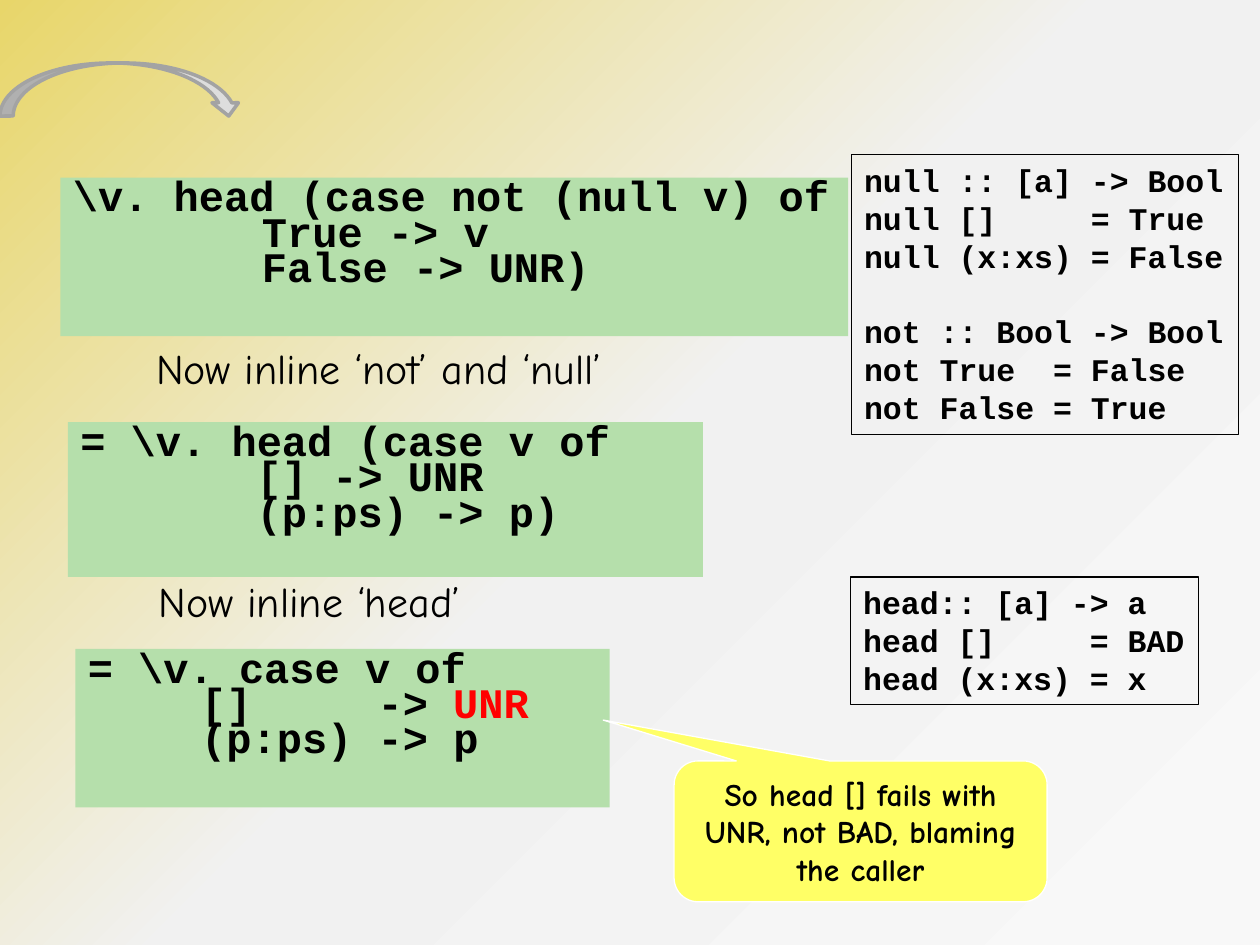
from copy import deepcopy
from pptx import Presentation
from pptx.dml.color import RGBColor
from pptx.enum import shapes, text
from pptx.util import Cm, Pt

COLORS = {"ink": "000000", "blame": "FF0000", "code": "B5DFAB", "callout": "FFFF66",
          "edge": "FFFFFF", "arrow": "DDDDDD", "arrow_edge": "A3A3A3"}
BACKDROP = [(0, "E8D66A"), (0.5, "F1F1F1"), (0.5, "F1F1F1"), (1, "F8F8F8")]
CODE_FONT, NOTE_FONT = "Courier New", "Comic Neue"

STEPS = [
    ((1.22, 3.58, 15.88, 3.2),
     [("\\v. head (case not (null v) of\n\t\t\tTrue -> v\n\t\t\tFalse -> UNR)", "ink")]),
    ((1.37, 8.51, 12.8, 3.12),
     [("= \\v. head (case v of\n\t\t  [] -> UNR\n\t\t  (p:ps) -> p)", "ink")]),
    ((1.52, 13.08, 10.77, 3.2),
     [("= \\v. case v of\n\t  []     -> ", "ink"), ("UNR", "blame"),
      ("\n\t  (p:ps) -> p", "ink")]),
]
DEFINITIONS = [
    ((17.17, 3.12, 7.8, 5.64),
     [["null :: [a] -> Bool", "null []     = True", "null (x:xs) = False"],
      ["not :: Bool -> Bool", "not True  = False", "not False = True"]]),
    ((17.15, 11.63, 7.01, 2.57),
     [["head:: [a] -> a", "head []     = BAD", "head (x:xs) = x"]]),
]
REMARKS = [
    ((2.9, 6.78, 10.19, 1.27), "Now inline ‘not’ and ‘null’"),
    ((2.95, 11.48, 7.04, 1.27), "Now inline ‘head’"),
]
VERDICT = "So head [] fails with UNR, not BAD, blaming the caller"


def color(name):
    return RGBColor.from_string(COLORS[name])


def add_box(slide, kind, place, fill=None, edge=None, width=0.75):
    box = slide.shapes.add_shape(kind, *map(Cm, place))
    box.shadow.inherit = False
    if fill:
        box.fill.solid()
        box.fill.fore_color.rgb = color(fill)
    else:
        box.fill.background()
    if edge:
        box.line.color.rgb = color(edge)
        box.line.width = Pt(width)
    else:
        box.line.fill.background()
    box.text_frame.word_wrap = False
    box.text_frame.vertical_anchor = text.MSO_ANCHOR.TOP
    return box


def style(paragraph, font, size, bold=True, align=text.PP_ALIGN.LEFT):
    paragraph.alignment = align
    paragraph.font.name = font
    paragraph.font.size = Pt(size)
    paragraph.font.bold = bold
    paragraph.font.color.rgb = color("ink")


def add_step(slide, place, pieces):
    step = add_box(slide, shapes.MSO_SHAPE.RECTANGLE, place, "code")
    paragraph = step.text_frame.paragraphs[0]
    style(paragraph, CODE_FONT, 24)
    paragraph.line_spacing = 0.7
    for piece, ink in pieces:
        for number, line in enumerate(piece.split("\n")):
            if number:
                paragraph.add_line_break()
            if line:
                run = paragraph.add_run()
                run.text = line
                run.font.color.rgb = color(ink)
    for line_break in paragraph._p.findall("{*}br"):
        line_break.insert(0, deepcopy(paragraph.runs[0]._r.rPr))
        line_break[0].set("sz", "2400")


def add_definition(slide, place, groups):
    definition = add_box(slide, shapes.MSO_SHAPE.RECTANGLE, place, edge="ink")
    frame = definition.text_frame
    frame.text = "\n".join(line for group in groups for line in group)
    for paragraph in frame.paragraphs:
        style(paragraph, CODE_FONT, 18)
    start = 0
    for group in groups[:-1]:
        start += len(group)
        frame.paragraphs[start].space_before = Pt(21.6)


def add_remark(slide, place, words):
    remark = slide.shapes.add_textbox(*map(Cm, place))
    remark.text_frame.word_wrap = False
    remark.text_frame.text = words
    style(remark.text_frame.paragraphs[0], NOTE_FONT, 24, bold=False)


def add_verdict(slide):
    verdict = add_box(slide, shapes.MSO_SHAPE.ROUNDED_RECTANGULAR_CALLOUT,
                      (13.59, 15.34, 7.52, 2.84), "callout", "edge")
    for index, value in enumerate((-0.69, -0.79, 0.17)):
        verdict.adjustments[index] = value
    frame = verdict.text_frame
    frame.word_wrap = True
    frame.vertical_anchor = text.MSO_ANCHOR.MIDDLE
    frame.text = VERDICT
    style(frame.paragraphs[0], NOTE_FONT, 18, align=text.PP_ALIGN.CENTER)


def paint_backdrop(slide):
    fill = slide.background.fill
    fill.gradient()
    fill.gradient_angle = 315
    stops = fill.gradient_stops
    stop_list = stops[0]._gs.getparent()
    while len(stop_list) < len(BACKDROP):
        stop_list.append(deepcopy(stop_list[0]))
    for stop, (position, shade) in zip(fill.gradient_stops, BACKDROP):
        stop.position = position
        stop.color.rgb = RGBColor.from_string(shade)


def main():
    deck = Presentation()
    deck.slide_width, deck.slide_height = Cm(25.4), Cm(19.05)
    slide = deck.slides.add_slide(deck.slide_layouts[6])
    paint_backdrop(slide)
    for place, pieces in STEPS:
        add_step(slide, place, pieces)
    for place, groups in DEFINITIONS:
        add_definition(slide, place, groups)
    for place, words in REMARKS:
        add_remark(slide, place, words)
    add_verdict(slide)
    add_box(slide, shapes.MSO_SHAPE.CURVED_DOWN_ARROW, (0, 1.27, 4.88, 1.07),
            "arrow", "arrow_edge", 2)
    deck.save("out.pptx")


if __name__ == "__main__":
    main()
